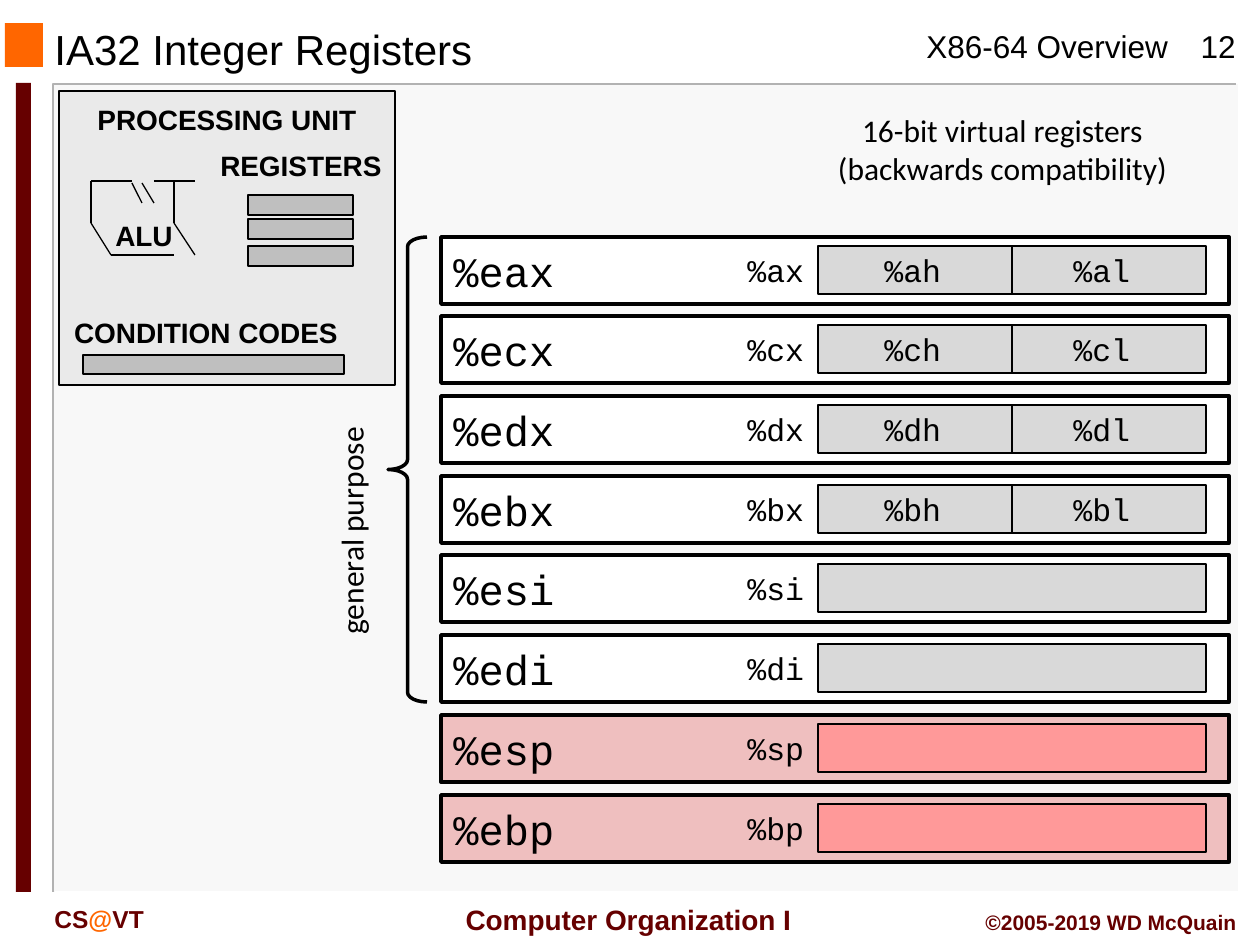
from dataclasses import dataclass

from lxml.etree import SubElement
from pptx import Presentation
from pptx.dml.color import RGBColor
from pptx.enum.shapes import MSO_CONNECTOR, MSO_SHAPE as Preset
from pptx.enum.text import MSO_ANCHOR as Anchor, PP_ALIGN as Align
from pptx.oxml.ns import qn
from pptx.util import Emu, Pt

PX = 914400 / 126  # EMU in one px
COLORS = {
    "black": "000000", "white": "FFFFFF", "panel": "F8F8F8", "edge": "B2B2B2",
    "orange": "FF6600", "maroon": "660000", "unit": "EAEAEA", "bar": "BFBFBF",
    "half": "D9D9D9", "pink": "EFBFBF", "red": "FF9999",
}


@dataclass(frozen=True)
class Box:
    left: int
    top: int
    width: int
    height: int

    def emu(self) -> list[Emu]:
        return [px(n) for n in (self.left, self.top, self.width, self.height)]


@dataclass(frozen=True)
class Style:
    size: int
    font: str = "Arial"
    color: str = "black"
    bold: bool = False
    align: Align = Align.LEFT


@dataclass(frozen=True)
class Label:
    text: str
    box: Box
    style: Style
    wrap: bool = True
    anchor: Anchor = Anchor.TOP
    rotation: int = 0


@dataclass(frozen=True)
class Register:
    letters: str
    halves: bool = False
    special: bool = False


def px(length: int) -> Emu:
    return Emu(round(length * PX))


def rgb(name: str) -> RGBColor:
    return RGBColor.from_string(COLORS[name])


def style_run(run, style: Style, color: str = "") -> None:
    run.font.size, run.font.name, run.font.bold = Pt(style.size), style.font, style.bold
    run.font.color.rgb = rgb(color or style.color)


def write(frame, text: str, style: Style) -> None:
    frame.text = text
    for paragraph in frame.paragraphs:
        paragraph.alignment = style.align
        for run in paragraph.runs:
            style_run(run, style)


def draw_label(shapes, label: Label):
    holder = shapes.add_textbox(*label.box.emu())
    holder.rotation = label.rotation
    frame = holder.text_frame
    frame.word_wrap, frame.vertical_anchor = label.wrap, label.anchor
    write(frame, label.text, label.style)
    return frame


def draw_rect(shapes, box: Box, fill: str, line_width: float = 0):
    rect = shapes.add_shape(Preset.RECTANGLE, *box.emu())
    rect.shadow.inherit = False
    rect.fill.solid()
    rect.fill.fore_color.rgb = rgb(fill)
    if line_width:
        rect.line.color.rgb, rect.line.width = rgb("black"), Pt(line_width)
    else:
        rect.line.fill.background()
    return rect


def draw_line(shapes, x1: int, y1: int, x2: int, y2: int, width: float = 0.75):
    line = shapes.add_connector(MSO_CONNECTOR.STRAIGHT, px(x1), px(y1), px(x2), px(y2))
    line.line.color.rgb, line.line.width = rgb("black"), Pt(width)
    SubElement(line._element.spPr, qn("a:effectLst"))
    return line


def draw_edge(shapes, points: list[tuple[int, int]], color: str) -> None:
    outline = shapes.build_freeform(*points[0], scale=PX)
    outline.add_line_segments(points[1:], close=False)
    edge = outline.convert_to_shape()
    edge.shadow.inherit = False
    edge.fill.background()
    edge.line.color.rgb, edge.line.width = rgb(color), Pt(1)


TITLE = Style(24)
HEADER = Style(18)
NUMBER = Style(18, align=Align.CENTER)
COURSE = Style(16, color="maroon", bold=True, align=Align.CENTER)
SCHOOL = Style(14, color="maroon", bold=True)
RIGHTS = Style(12, color="maroon", bold=True, align=Align.RIGHT)
WIDE_NAME = Style(24, "Courier New")
NARROW_NAME = Style(18, "Courier New")
NOTE = Style(18, "Calibri", align=Align.CENTER)
UNIT_TEXT = Style(16, bold=True, align=Align.CENTER)

FRAME_LABELS = [
    Label("X86-64 Overview", Box(914, 21, 271, 50), HEADER, wrap=False),
    Label("Computer Organization I", Box(445, 896, 367, 47), COURSE, anchor=Anchor.MIDDLE),
    Label("12", Box(1176, 21, 84, 50), NUMBER),
    Label("©2005-2019 WD McQuain", Box(955, 903, 294, 38), RIGHTS),
    Label("IA32 Integer Registers", Box(42, 25, 798, 48), TITLE, anchor=Anchor.MIDDLE),
]
NOTES = [
    Label("16-bit virtual registers\n(backwards compatibility)", Box(819, 105, 367, 89),
          NOTE, wrap=False),
    Label("general purpose", Box(232, 506, 238, 50), NOTE, wrap=False, rotation=270),
]
UNIT_LABELS = [
    Label("PROCESSING UNIT", Box(59, 96, 336, 47), UNIT_TEXT),
    Label("REGISTERS", Box(195, 142, 212, 47), UNIT_TEXT),
    Label("ALU", Box(102, 212, 84, 47), UNIT_TEXT),
    Label("CONDITION CODES", Box(60, 309, 292, 47), UNIT_TEXT),
]
UNIT_BARS = [Box(248, top, 105, 20) for top in (195, 219, 246)] + [Box(83, 355, 261, 19)]
ALU_LINES = [
    (91, 181, 91, 223), (91, 223, 111, 255), (174, 181, 174, 223),
    (174, 223, 195, 255), (111, 255, 174, 255), (132, 183, 142, 203),
    (142, 183, 154, 203), (91, 181, 132, 181), (154, 181, 195, 181),
]
REGISTERS = [Register(name, halves=True) for name in ("ax", "cx", "dx", "bx")]
REGISTERS += [Register(name) for name in ("si", "di")]
REGISTERS += [Register(name, special=True) for name in ("sp", "bp")]
FIRST_TOP, LAST_TOP = 237, 795


def draw_frame(shapes) -> None:
    draw_rect(shapes, Box(54, 84, 1184, 808), "panel")
    draw_edge(shapes, [(1236, 84), (53, 84), (53, 892)], "edge")
    draw_edge(shapes, [(1239, 84), (1239, 892), (55, 892)], "white")
    draw_rect(shapes, Box(5, 23, 38, 44), "orange")
    draw_rect(shapes, Box(16, 83, 15, 809), "maroon")
    for label in FRAME_LABELS:
        draw_label(shapes, label)
    school = draw_label(shapes, Label("CS", Box(42, 898, 189, 42), SCHOOL))
    for text, color in (("@", "orange"), ("VT", "maroon")):
        run = school.paragraphs[0].add_run()
        run.text = text
        style_run(run, SCHOOL, color)


def draw_register(shapes, register: Register, top: int) -> None:
    wide = draw_rect(shapes, Box(441, top, 788, 67), "pink" if register.special else "white", 2)
    wide.text_frame.vertical_anchor = Anchor.MIDDLE
    write(wide.text_frame, f"%e{register.letters}", WIDE_NAME)
    narrow = draw_rect(shapes, Box(818, top + 9, 388, 48),
                       "red" if register.special else "half", 1)
    names = [(register.letters, 735)]
    if register.halves:
        divider = draw_line(shapes, 1012, top + 9, 1012, top + 57, 1)
        divider.begin_connect(narrow, 0)
        divider.end_connect(narrow, 2)
        names += [(register.letters[0] + "h", 872), (register.letters[0] + "l", 1061)]
    for name, left in names:
        draw_label(shapes, Label(f"%{name}", Box(left, top + 8, 82, 50), NARROW_NAME, wrap=False))


def draw_brace(shapes) -> None:
    brace = shapes.add_shape(Preset.RIGHT_BRACE, *Box(388, 237, 39, 465).emu())
    brace.rotation = 180
    brace.adjustments[0], brace.adjustments[1] = 0.25, 0.5
    brace.shadow.inherit = False
    brace.fill.background()
    brace.line.color.rgb, brace.line.width = rgb("black"), Pt(2)


def draw_processing_unit(shapes) -> None:
    draw_rect(shapes, Box(59, 91, 336, 294), "unit", 0.75)
    for ends in ALU_LINES:
        draw_line(shapes, *ends)
    for bar in UNIT_BARS:
        draw_rect(shapes, bar, "bar", 0.75)
    for label in UNIT_LABELS:
        draw_label(shapes, label)


def main() -> None:
    deck = Presentation()
    deck.slide_width, deck.slide_height = px(1260), px(945)
    shapes = deck.slides.add_slide(deck.slide_layouts[6]).shapes
    # Page frame, header and footer
    draw_frame(shapes)
    # Register file, evenly spaced
    for row, register in enumerate(REGISTERS):
        top = FIRST_TOP + row * (LAST_TOP - FIRST_TOP) // (len(REGISTERS) - 1)
        draw_register(shapes, register, top)
    # Notes and brace
    for note in NOTES:
        draw_label(shapes, note)
    draw_brace(shapes)
    # Processing unit diagram
    draw_processing_unit(shapes)
    deck.save("out.pptx")


if __name__ == "__main__":
    main()
